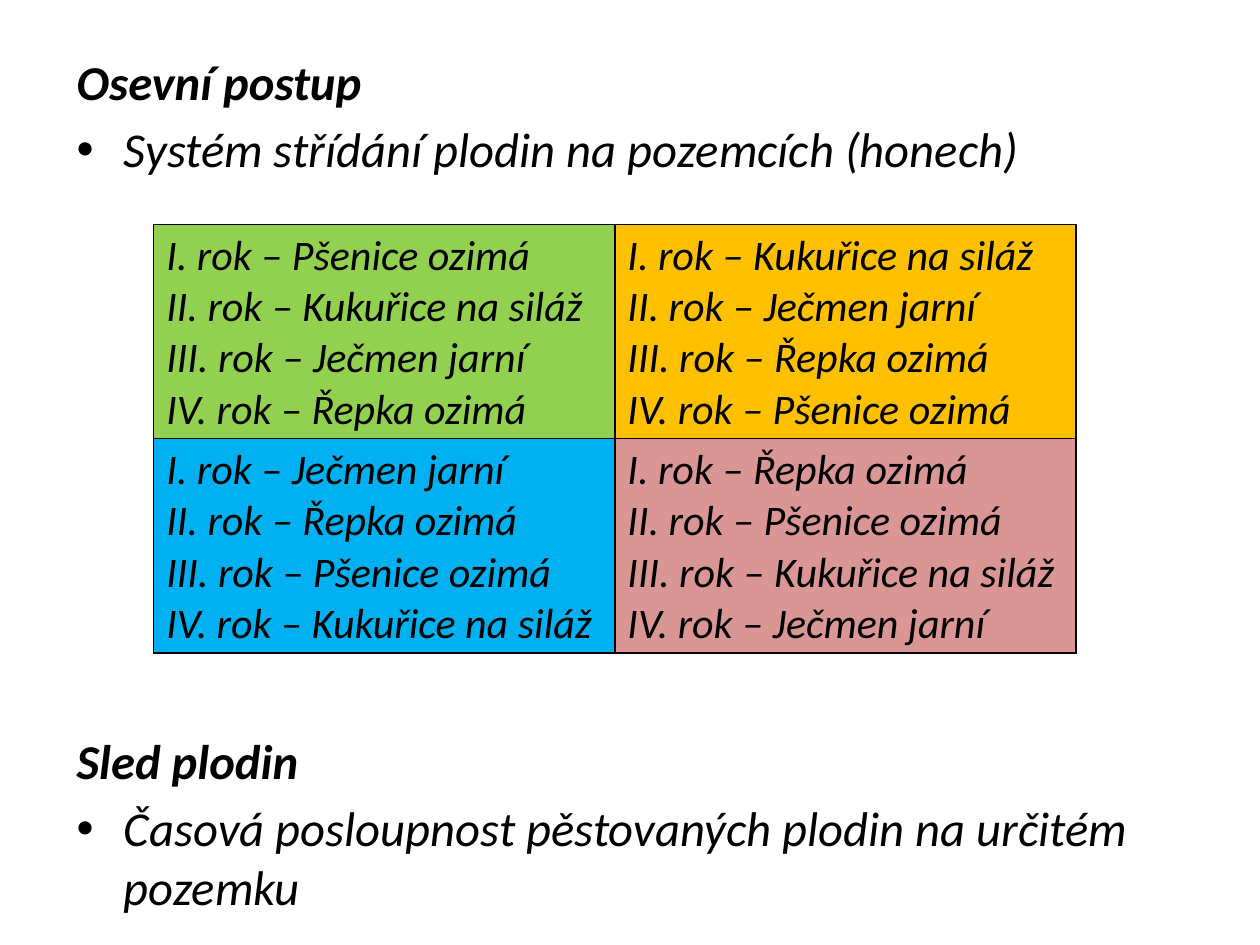
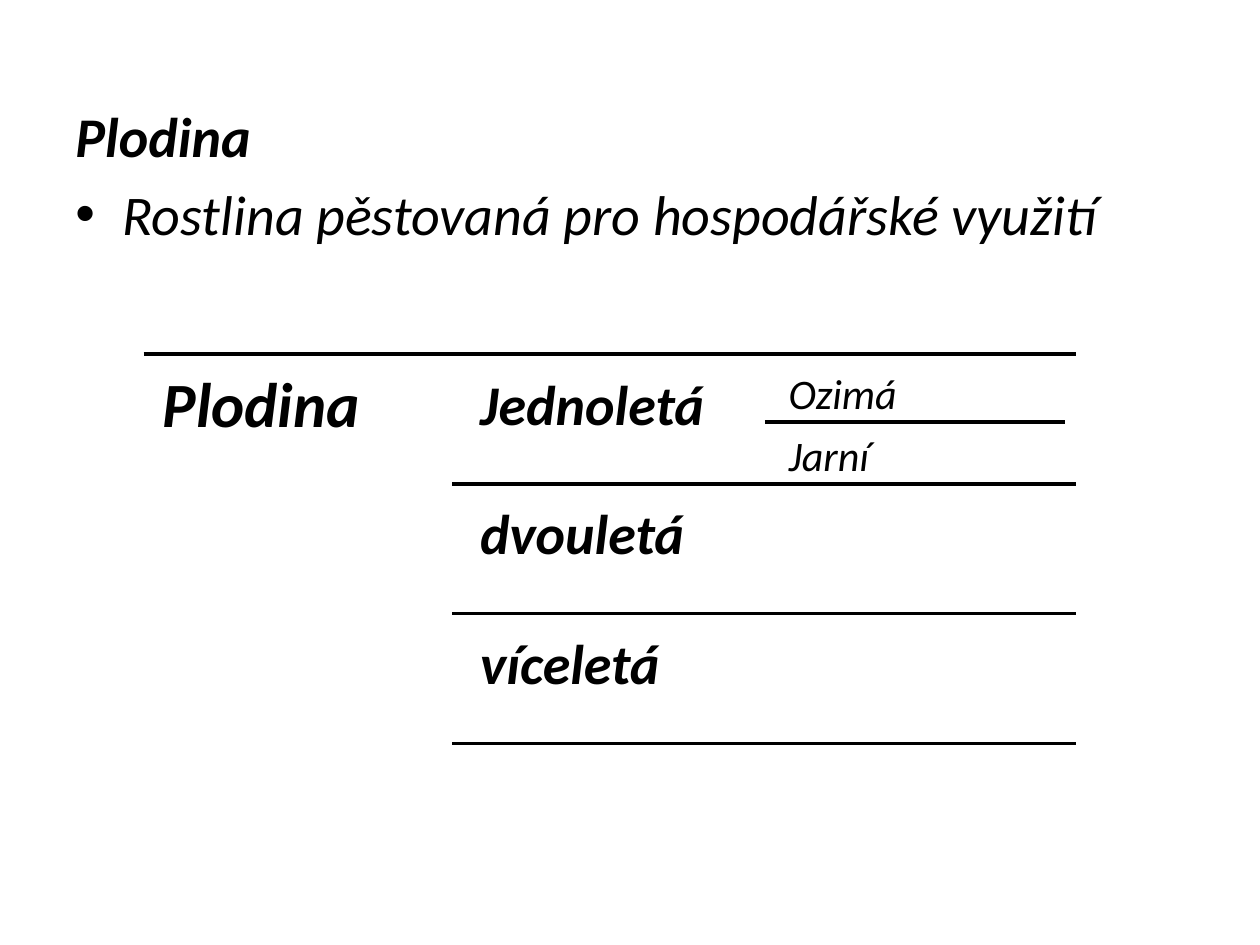
from lxml.etree import SubElement
from pptx import Presentation
from pptx.dml.color import RGBColor
from pptx.enum.shapes import MSO_CONNECTOR as Connector
from pptx.enum.text import MSO_ANCHOR as Anchor
from pptx.oxml.ns import qn
from pptx.util import Inches, Pt

COLUMNS, ROWS = 100, 75
WIDTH, HEIGHT = Inches(10), Inches(7.5)
FONT = "Calibri"
BLACK = "000000"
FIELD_COLORS = ["92D050", "FFC000", "00B0F0", "D99694"]
CROPS = ["Pšenice ozimá", "Kukuřice na siláž", "Ječmen jarní", "Řepka ozimá"]
YEARS = ["I", "II", "III", "IV"]
LIFESPANS = ["Jednoletá", "dvouletá", "víceletá"]
SEASONS = ["Ozimá", "Jarní"]


def color(value):
    return RGBColor.from_string(value)


def across(columns):
    return round(WIDTH * columns / COLUMNS)


def down(rows):
    return round(HEIGHT * rows / ROWS)


def add_slide(presentation):
    return presentation.slides.add_slide(presentation.slide_layouts[6])


def add_run(paragraph, text, size, bold=False):
    run = paragraph.add_run()
    run.text = text
    font = run.font
    font.name, font.size = FONT, Pt(size)
    font.bold, font.italic = bold, True
    font.color.rgb = color(BLACK)


def next_paragraph(frame, index):
    return frame.add_paragraph() if index else frame.paragraphs[0]


def add_frame(slide, left, top, width, height):
    shape = slide.shapes.add_textbox(across(left), down(top), across(width), down(height))
    shape.text_frame.word_wrap = True
    return shape.text_frame


def add_bullet(paragraph):
    properties = paragraph._p.get_or_add_pPr()
    properties.set("marL", str(across(3.75)))
    properties.set("indent", str(-across(3.75)))
    SubElement(properties, qn("a:buFont"), typeface="Arial")
    SubElement(properties, qn("a:buChar"), char="•")


def add_definitions(slide, box, size, definitions, gap=0):
    frame = add_frame(slide, *box)
    for index, (term, meaning) in enumerate(definitions):
        heading = next_paragraph(frame, index)
        heading.space_before = Pt(gap if index else 0)
        add_run(heading, term, size, bold=True)
        explanation = frame.add_paragraph()
        explanation.space_before = Pt(size * 0.19)
        add_bullet(explanation)
        add_run(explanation, meaning, size)


def add_label(slide, box, text, size, inset, bold=True):
    frame = add_frame(slide, *box)
    frame.margin_left = frame.margin_right = across(inset)
    frame.margin_top = frame.margin_bottom = down(inset)
    paragraph = frame.paragraphs[0]
    paragraph.line_spacing = 0.9
    add_run(paragraph, text, size, bold)


def add_rule(slide, start, end, top):
    line = slide.shapes.add_connector(
        Connector.STRAIGHT, across(start), down(top), across(end), down(top))
    line.line.color.rgb = color(BLACK)
    line.line.width = Pt(2)
    SubElement(line._element.spPr, qn("a:effectLst"))


def add_borders(cell):
    properties = cell._tc.get_or_add_tcPr()
    for position, side in enumerate(["lnL", "lnR", "lnT", "lnB"]):
        border = SubElement(properties, qn(f"a:{side}"), w=str(Pt(1)))
        fill = SubElement(border, qn("a:solidFill"))
        SubElement(fill, qn("a:srgbClr"), val=BLACK)
        properties.remove(border)
        properties.insert(position, border)


def add_rotation_table(slide, left, top, width, height):
    table = slide.shapes.add_table(
        2, 2, across(left), down(top), across(width), down(height)).table
    table.first_row = table.horz_banding = False
    for field, fill in enumerate(FIELD_COLORS):
        cell = table.cell(*divmod(field, 2))
        cell.fill.solid()
        cell.fill.fore_color.rgb = color(fill)
        cell.vertical_anchor = Anchor.TOP
        add_borders(cell)
        crops = CROPS[field:] + CROPS[:field]
        for index, (year, crop) in enumerate(zip(YEARS, crops)):
            paragraph = next_paragraph(cell.text_frame, index)
            add_run(paragraph, f"{year}. rok – {crop}", 24)


def add_crop_tree(slide, top):
    root, branch, leaf, right = 11.4, 35.9, 60.7, 85.4
    step, padding, label_width = 10.3, 0.5, 23.8
    half = (step - padding) / 2
    add_rule(slide, root, right, top)
    add_label(slide, (root, top, branch - root, 3 * step), "Plodina", 36, 1.5)
    for index, lifespan in enumerate(LIFESPANS):
        level = top + index * step
        box = (branch + 0.9, level + padding, label_width, 2 * half)
        add_label(slide, box, lifespan, 32, 1.3)
        add_rule(slide, branch, right, level + step)
    for index, season in enumerate(SEASONS):
        box = (leaf + 0.9, top + padding + index * half, label_width, half)
        add_label(slide, box, season, 24, 1, bold=False)
    add_rule(slide, leaf, right - 0.9, top + padding + half)


def build_rotation_slide(presentation):
    slide = add_slide(presentation)
    add_definitions(slide, (5.1, 3.6, 90, 69.3), 27.8, [
        ("Osevní postup", "Systém střídání plodin na pozemcích (honech)"),
        ("Sled plodin", "Časová posloupnost pěstovaných plodin na určitém pozemku"),
    ], gap=316)
    add_rotation_table(slide, 12.2, 17.8, 73.2, 34)


def build_crop_slide(presentation):
    slide = add_slide(presentation)
    add_definitions(slide, (5, 7.6, 90, 59.4), 32, [
        ("Plodina", "Rostlina pěstovaná pro hospodářské využití"),
    ])
    add_crop_tree(slide, 28.1)


def main():
    presentation = Presentation()
    presentation.slide_width, presentation.slide_height = WIDTH, HEIGHT
    build_rotation_slide(presentation)
    build_crop_slide(presentation)
    presentation.save("out.pptx")


main()
